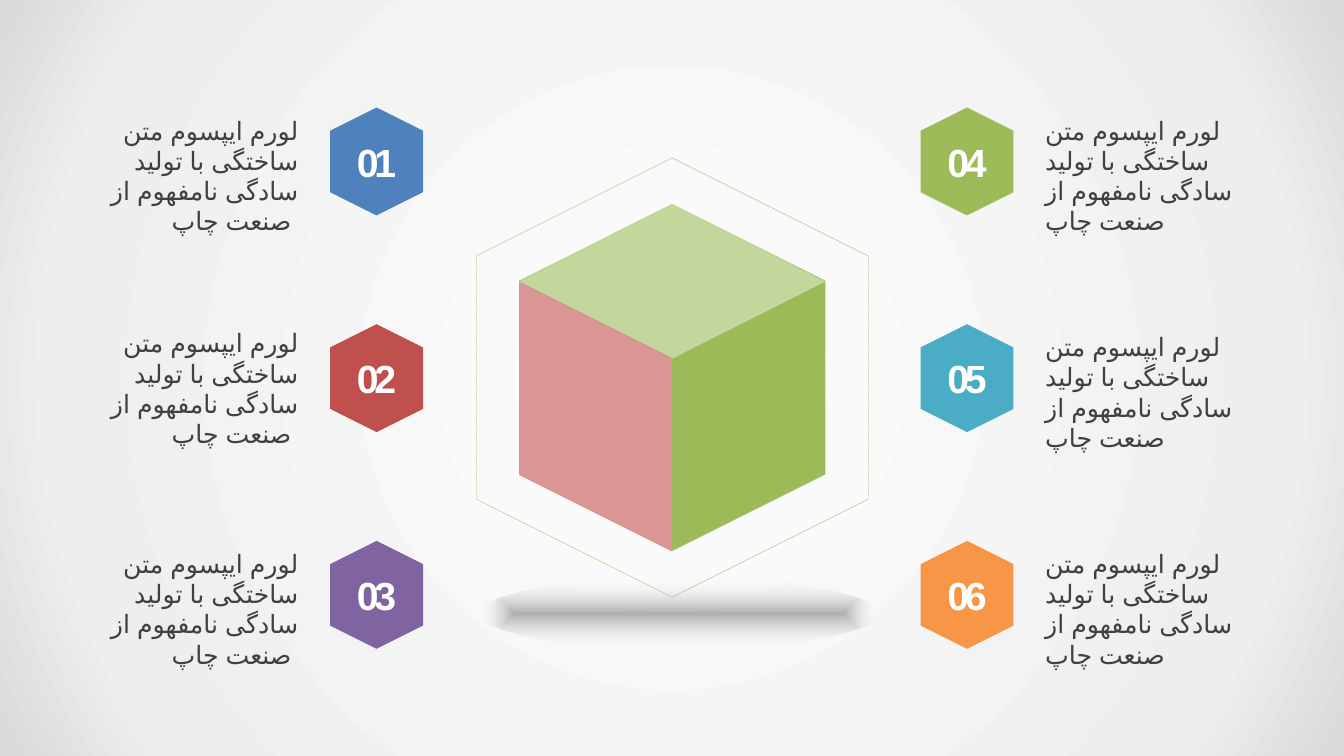
from lxml import etree
from pptx import Presentation
from pptx.dml.color import RGBColor
from pptx.enum.dml import MSO_LINE
from pptx.enum.shapes import MSO_SHAPE
from pptx.enum.text import MSO_ANCHOR, MSO_AUTO_SIZE, PP_ALIGN
from pptx.oxml.ns import qn
from pptx.util import Cm, Pt

HEXAGON, DIAMOND = MSO_SHAPE.HEXAGON, MSO_SHAPE.DIAMOND
PARALLELOGRAM, OVAL = MSO_SHAPE.PARALLELOGRAM, MSO_SHAPE.OVAL
LEFT, RIGHT, CENTER = PP_ALIGN.LEFT, PP_ALIGN.RIGHT, PP_ALIGN.CENTER
MIDDLE, GROW, DASH = MSO_ANCHOR.MIDDLE, MSO_AUTO_SIZE.SHAPE_TO_FIT_TEXT, MSO_LINE.SQUARE_DOT

FONT = "Arial"
COLORS = {
    "blue": "4F81BD", "red": "C0504D", "purple": "8064A2",
    "green": "9BBB59", "teal": "4BACC6", "orange": "F79646",
    "light green": "C3D69B", "light red": "D99694",
    "white": "FFFFFF", "text": "404040", "shade": "0D0D0D",
    "pale gray": "EEEEEE", "edge gray": "D9D9D9",
}
BODY = "لورم ایپسوم متن ساختگی با تولید سادگی نامفهوم از صنعت چاپ"
LEFT_ITEMS = [("01", "blue", 0), ("02", "red", 0.1), ("03", "purple", 0)]
RIGHT_ITEMS = [("04", "green", 0), ("05", "teal", 0), ("06", "orange", 0)]
ITEM_TOP, ITEM_PITCH, ITEM_WIDTH = 2.71, 5.46, 8.81
BADGE_LENGTH, BADGE_WIDTH = 2.72, 2.34
TEXT_WIDTH, TEXT_HEIGHT, TEXT_DROP = 5.92, 2.57, 0.06


def rgb(name):
    """Return the named colour."""
    return RGBColor.from_string(COLORS[name])


def apply_gradient(fill, holder, path_kind, stops):
    """Give the holder a gradient that spreads from its centre."""
    fill.gradient()
    gradient = holder.find(".//" + qn("a:gradFill"))
    for child in list(gradient):
        gradient.remove(child)
    stop_list = etree.SubElement(gradient, qn("a:gsLst"))
    for position, name, opacity in stops:
        stop = etree.SubElement(stop_list, qn("a:gs"), pos=str(position * 1000))
        color = etree.SubElement(stop, qn("a:srgbClr"), val=COLORS[name])
        if opacity < 100:
            etree.SubElement(color, qn("a:alpha"), val=str(opacity * 1000))
    spread = etree.SubElement(gradient, qn("a:path"), path=path_kind)
    etree.SubElement(spread, qn("a:fillToRect"), l="50000", t="50000", r="50000", b="50000")


def add_centered(shapes, kind, center, size, color=None, rotation=0):
    """Add a flat shape around a centre point."""
    (x, y), (width, height) = center, size
    shape = shapes.add_shape(kind, Cm(x - width / 2), Cm(y - height / 2), Cm(width), Cm(height))
    shape.rotation = rotation
    shape.shadow.inherit = False
    shape.line.fill.background()
    if color:
        shape.fill.solid()
        shape.fill.fore_color.rgb = rgb(color)
    else:
        shape.fill.background()
    return shape


def write(frame, text, size, color, alignment):
    """Write one paragraph and return its formatted span."""
    frame.text = text
    para = frame.paragraphs[0]
    para.alignment = alignment
    span = para.runs[0]
    span.font.size = Pt(size)
    span.font.name = FONT
    span.font.color.rgb = rgb(color)
    return span


def add_cube(page, box):
    """Draw the cube with its outline and ground shadow in the box."""
    left, top, width, height = box
    x, y = left + width / 2, top + height / 2
    ground = add_centered(page.shapes, OVAL, (x + 0.15, top + height + 0.41), (10.03, 1.75))
    apply_gradient(ground.fill, ground.element, "shape", [(0, "shade", 31), (100, "white", 0)])
    cube = page.shapes.add_group_shape().shapes
    outline = add_centered(cube, HEXAGON, (x, y), (height, width), rotation=90)
    outline.line.color.rgb = rgb("green")
    outline.line.width = Pt(0.25)
    outline.line.dash_style = DASH
    add_centered(cube, HEXAGON, (x, y), (8.74, 7.72), "green", 90)
    add_centered(cube, DIAMOND, (x, y - 2.42), (7.72, 3.89), "light green")
    face = add_centered(cube, PARALLELOGRAM, (x - 1.93, y + 0.98), (6.81, 3.86), "light red", 90)
    face.adjustments[0] = 0.5


def add_item(page, box, number, color, lift, mirrored):
    """Place a numbered badge and its text at opposite ends of the box."""
    left, top, width, height = box
    badge_x = left + width - BADGE_WIDTH / 2 if mirrored else left + BADGE_WIDTH / 2
    text_left = left if mirrored else left + width - TEXT_WIDTH
    group = page.shapes.add_group_shape().shapes
    badge = add_centered(group, HEXAGON, (badge_x, top + height / 2),
                         (BADGE_LENGTH, BADGE_WIDTH), color, 90)
    badge.text_frame.vertical_anchor = MIDDLE
    badge.text_frame._txBody.bodyPr.set("vert", "vert270")
    span = write(badge.text_frame, number, 28, "white", CENTER)
    span.font.bold = True
    span.font._element.set("spc", "-300")

    caption = group.add_textbox(Cm(text_left), Cm(top + TEXT_DROP - lift),
                                Cm(TEXT_WIDTH), Cm(TEXT_HEIGHT))
    caption.text_frame.word_wrap = True
    caption.text_frame.auto_size = GROW
    text = BODY + " " if mirrored else BODY
    span = write(caption.text_frame, text, 18, "text", RIGHT if mirrored else LEFT)
    span.font._element.set("lang", "fa-IR")
    etree.SubElement(span.font._element, qn("a:cs"), typeface=FONT)


def add_column(page, left, items, mirrored):
    """Stack the items of one side at an even pitch."""
    for row, (number, color, lift) in enumerate(items):
        box = (left, ITEM_TOP + row * ITEM_PITCH, ITEM_WIDTH, BADGE_LENGTH)
        add_item(page, box, number, color, lift, mirrored)


def main():
    """Build the slide and save the deck."""
    deck = Presentation()
    deck.slide_width, deck.slide_height = Cm(33.87), Cm(19.05)
    page = deck.slides.add_slide(deck.slide_layouts[6])
    apply_gradient(page.background.fill, page.element, "circle",
                   [(0, "white", 100), (81, "pale gray", 100), (100, "edge gray", 100)])
    add_cube(page, (12, 3.98, 9.88, 11.07))
    add_column(page, 23.2, RIGHT_ITEMS, mirrored=False)
    add_column(page, 1.85, LEFT_ITEMS, mirrored=True)
    deck.save("out.pptx")


if __name__ == "__main__":
    main()
